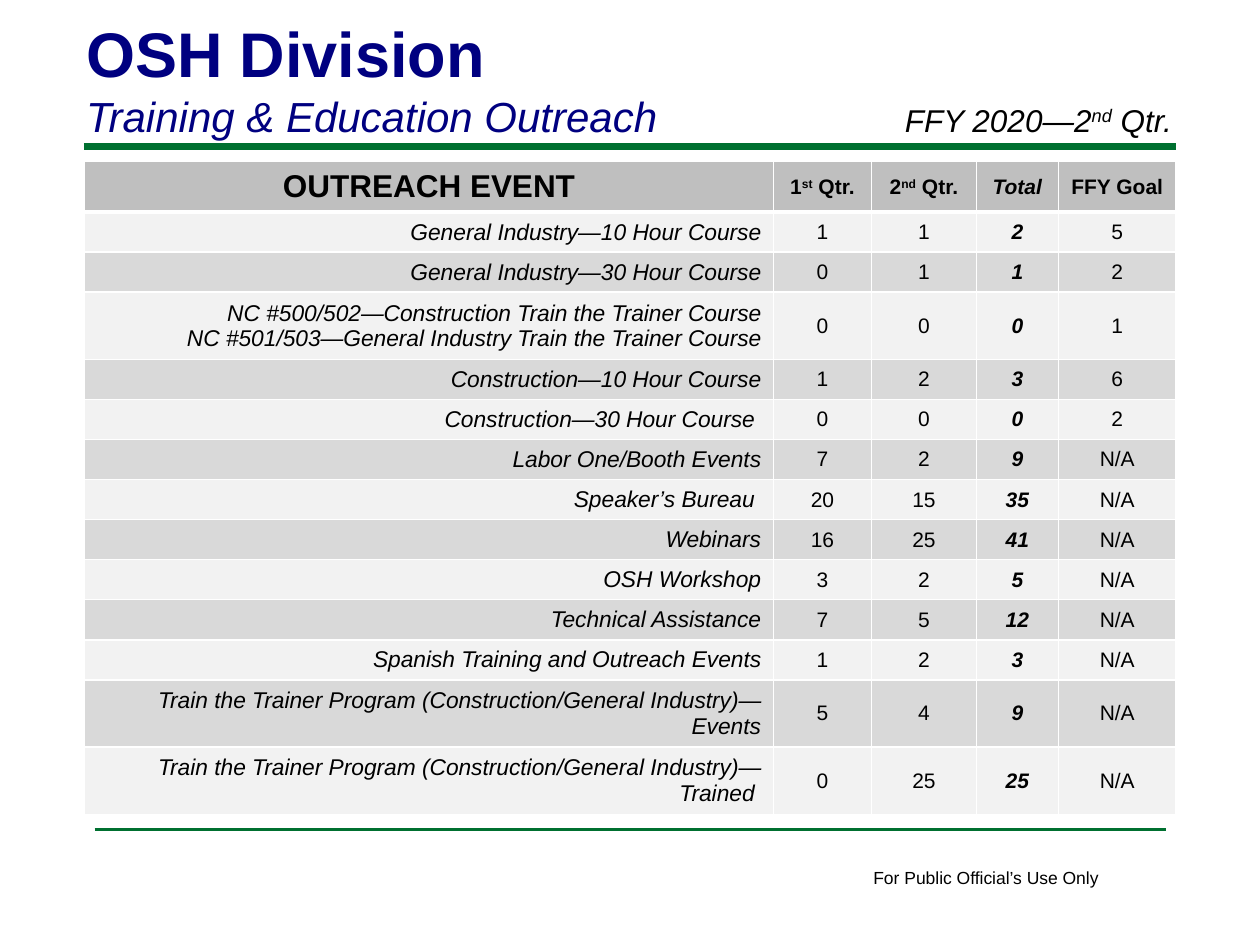
from lxml import etree
from pptx import Presentation
from pptx.dml.color import RGBColor
from pptx.enum.shapes import MSO_CONNECTOR
from pptx.enum.text import MSO_ANCHOR, MSO_AUTO_SIZE, PP_ALIGN
from pptx.oxml.ns import qn
from pptx.util import Pt

LEFT, CENTER, RIGHT = PP_ALIGN.LEFT, PP_ALIGN.CENTER, PP_ALIGN.RIGHT
MIDDLE, TOP = MSO_ANCHOR.MIDDLE, MSO_ANCHOR.TOP
STRAIGHT = MSO_CONNECTOR.STRAIGHT
NO_FIT = MSO_AUTO_SIZE.NONE

BLACK, NAVY, GREEN, WHITE = "000000", "000080", "007030", "FFFFFF"
HEADER_FILL, BANDS = "BFBFBF", ("F2F2F2", "D9D9D9")

# Text between carets is superscript
HEADERS = ["OUTREACH EVENT", "1^st^ Qtr.", "2^nd^ Qtr.", "Total", "FFY Goal"]
EVENTS = [
    ("General Industry—10 Hour Course", 1, 1, 2, 5),
    ("General Industry—30 Hour Course", 0, 1, 1, 2),
    ("NC #500/502—Construction Train the Trainer Course\n"
     "NC #501/503—General Industry Train the Trainer Course", 0, 0, 0, 1),
    ("Construction—10 Hour Course", 1, 2, 3, 6),
    ("Construction—30 Hour Course ", 0, 0, 0, 2),
    ("Labor One/Booth Events", 7, 2, 9, "N/A"),
    ("Speaker’s Bureau ", 20, 15, 35, "N/A"),
    ("Webinars", 16, 25, 41, "N/A"),
    ("OSH Workshop", 3, 2, 5, "N/A"),
    ("Technical Assistance", 7, 5, 12, "N/A"),
    ("Spanish Training and Outreach Events", 1, 2, 3, "N/A"),
    ("Train the Trainer Program (Construction/General Industry)—Events",
     5, 4, 9, "N/A"),
    ("Train the Trainer Program (Construction/General Industry)—Trained ",
     0, 25, 25, "N/A"),
]
COL_WIDTHS = [393.6, 56, 60, 46.8, 67.4]
HEADER_H, ROW_H, TALL_ROW_H = 28, 22.9, 38.3
TALL_ROWS = (3, 12, 13)


def rgb(color):
    return RGBColor.from_string(color)


def write(p, text, color=BLACK, align=LEFT, **fmt):
    p.alignment = align
    for i, part in enumerate(text.split("^")):
        r = p.add_run()
        r.text = part
        r.font.color.rgb = rgb(color)
        for name, value in {"name": "Arial", "bold": False, **fmt}.items():
            setattr(r.font, name, value)
        if i % 2:
            r.font._element.set("baseline", "30000")


def add_title(slide, x, y, w, h):
    title = slide.shapes.title
    title.left, title.top, title.width, title.height = map(Pt, (x, y, w, h))
    tf = title.text_frame
    tf.auto_size, tf.vertical_anchor = NO_FIT, MIDDLE
    write(tf.paragraphs[0], "OSH Division", NAVY, size=Pt(36), bold=True)
    write(tf.add_paragraph(), "Training & Education Outreach", NAVY,
          size=Pt(24), italic=True)


def add_label(slide, x, y, w, h, text, wrap=True, **fmt):
    tf = slide.shapes.add_textbox(*map(Pt, (x, y, w, h))).text_frame
    tf.word_wrap, tf.vertical_anchor = wrap, TOP
    write(tf.paragraphs[0], text, **fmt)


def add_rule(slide, x, y, w, weight):
    line = slide.shapes.add_connector(STRAIGHT, Pt(x), Pt(y), Pt(x + w), Pt(y))
    line.line.color.rgb = rgb(GREEN)
    line.line.width = Pt(weight)
    etree.SubElement(line._element.spPr, qn("a:effectLst"))


def set_borders(cell, **weights):
    tcPr = cell._tc.get_or_add_tcPr()
    for side in "LRTB":
        ln = etree.SubElement(tcPr, qn(f"a:ln{side}"),
                              w=str(Pt(weights.get(side, 1))))
        fill = etree.SubElement(ln, qn("a:solidFill"))
        etree.SubElement(fill, qn("a:srgbClr"), val=WHITE)


def cell_format(row, col):
    if row == 0:
        return {"size": Pt(12 if col else 18), "bold": True,
                "italic": col == 3, "align": CENTER}
    if col == 0:
        return {"size": Pt(13), "italic": True, "align": RIGHT}
    return {"size": Pt(12), "bold": col == 3, "italic": col == 3,
            "align": CENTER}


def add_outreach_table(slide, x, y, w, h):
    rows = [HEADERS, *EVENTS]
    table = slide.shapes.add_table(len(rows), len(HEADERS),
                                   *map(Pt, (x, y, w, h))).table
    for column, width in zip(table.columns, COL_WIDTHS):
        column.width = Pt(width)
    for i, values in enumerate(rows):
        height = TALL_ROW_H if i in TALL_ROWS else ROW_H
        table.rows[i].height = Pt(height if i else HEADER_H)
        for j, value in enumerate(values):
            cell = table.cell(i, j)
            # Heavier white gap under the header row
            set_borders(cell, T=3 if i == 1 else 1, B=1 if i else 3)
            cell.fill.solid()
            cell.fill.fore_color.rgb = rgb(
                BANDS[(i - 1) % 2] if i else HEADER_FILL)
            cell.vertical_anchor = MIDDLE
            tf = cell.text_frame
            for k, text in enumerate(str(value).split("\n")):
                p = tf.add_paragraph() if k else tf.paragraphs[0]
                write(p, text, **cell_format(i, j))


def main():
    prs = Presentation()
    prs.slide_width, prs.slide_height = Pt(720), Pt(540)
    slide = prs.slides.add_slide(prs.slide_layouts[5])

    # Rules above and below the table
    add_rule(slide, 48, 84, 624, 4)
    add_rule(slide, 54, 474, 612, 2)

    # Footer, heading, table and reporting period
    add_label(slide, 492, 492, 144.5, 19.4, "For Public Official’s Use Only",
              wrap=False, size=Pt(10))
    add_title(slide, 42, 4.5, 594, 80)
    add_outreach_table(slide, 48.4, 92.4, sum(COL_WIDTHS), 372)
    add_label(slide, 510, 54, 180, 29, "FFY 2020—2^nd^ Qtr.",
              size=Pt(18), italic=True)
    prs.save("out.pptx")


if __name__ == "__main__":
    main()
